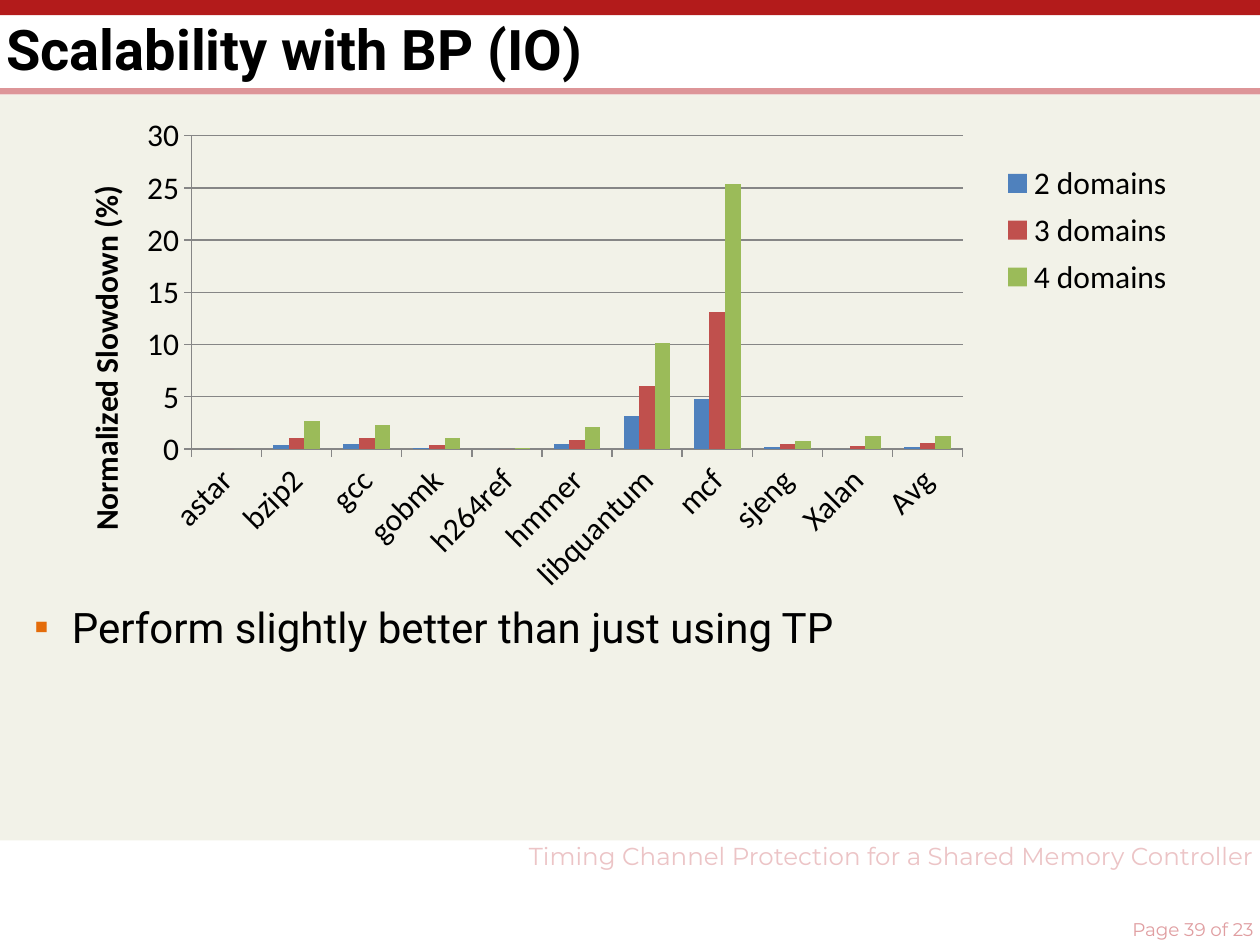
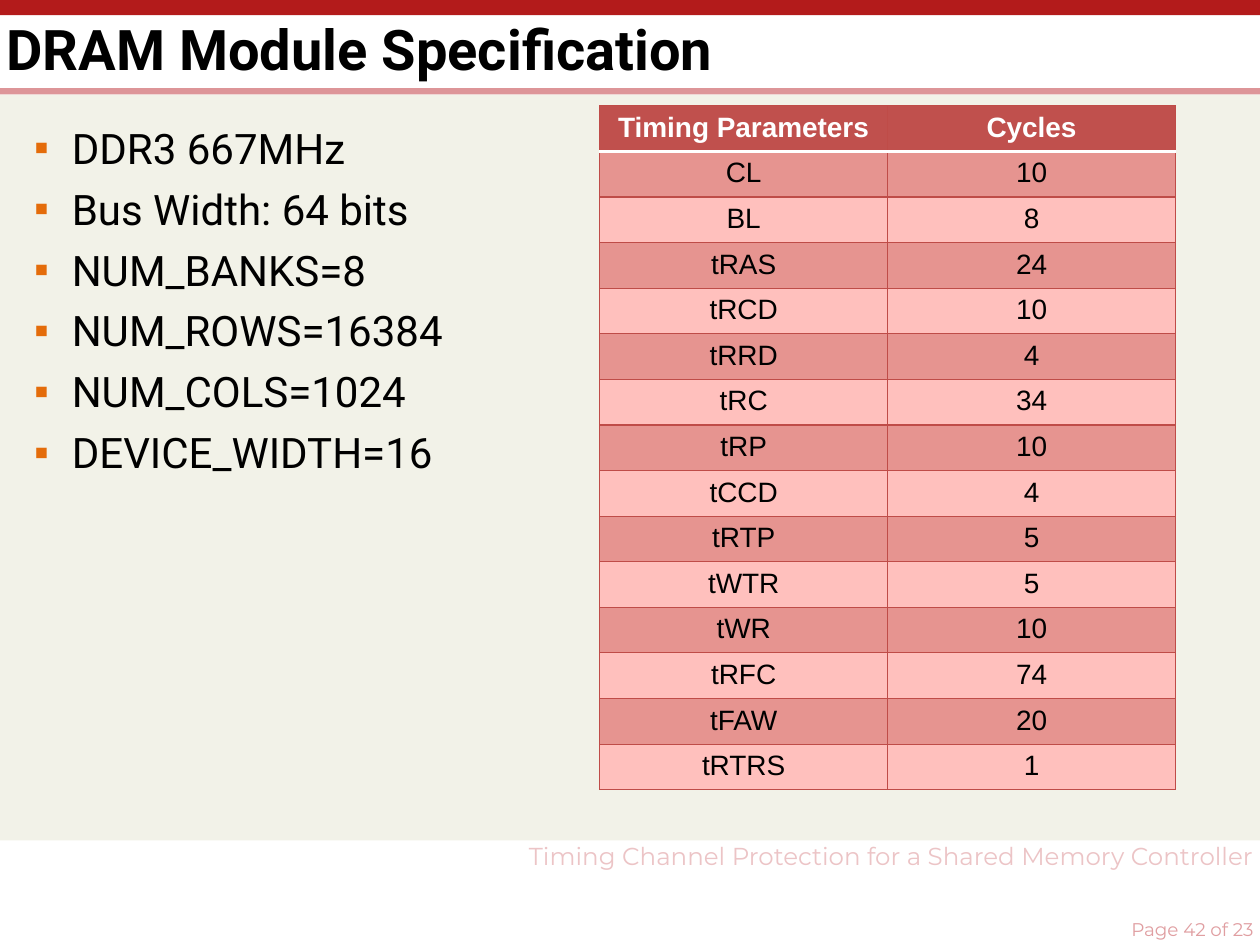
from lxml import etree
from pptx import Presentation
from pptx.chart.data import CategoryChartData
from pptx.dml.color import RGBColor
from pptx.enum.chart import XL_CHART_TYPE, XL_LEGEND_POSITION, XL_TICK_MARK
from pptx.enum.shapes import MSO_SHAPE
from pptx.enum.text import MSO_ANCHOR, MSO_AUTO_SIZE, PP_ALIGN
from pptx.oxml.ns import qn
from pptx.util import Inches, Pt

COLUMNS = XL_CHART_TYPE.COLUMN_CLUSTERED
LEGEND_RIGHT = XL_LEGEND_POSITION.RIGHT
TICK_OUT = XL_TICK_MARK.OUTSIDE
RECT = MSO_SHAPE.RECTANGLE
MIDDLE = MSO_ANCHOR.MIDDLE
NO_FIT = MSO_AUTO_SIZE.NONE
LEFT, CENTER, RIGHT = PP_ALIGN.LEFT, PP_ALIGN.CENTER, PP_ALIGN.RIGHT

W, H = 10, 7.5
COLORS = {
    "text": "000000", "white": "FFFFFF", "panel": "F2F2E8", "band": "B31B1B",
    "rule": "DD9598", "footer": "ECC4C6", "page": "E09EA1", "bullet": "E46C0A",
    "axis": "868686", "header": "C0504D", "border": "BF4C48",
    "row_dark": "E69490", "row_light": "FFC0BD",
}
BANDS = [("panel", 0.75, 5.92), ("band", 0, 0.12), ("rule", 0.7, 0.05)]
FOOTER = "Timing Channel Protection for a Shared Memory Controller"

SLOWDOWN = {
    "title": "Scalability with BP (IO)",
    "page": 39,
    "body_top": 4.72,
    "bullets": ["Perform slightly better than just using TP"],
    "axis": "Normalized Slowdown (%)",
    "programs": ["astar", "bzip2", "gcc", "gobmk", "h264ref", "hmmer",
                 "libquantum", "mcf", "sjeng", "Xalan", "Avg"],
    "series": [
        ("2 domains", "4F81BD", [0, 0.4, 0.5, 0.1, 0, 0.5, 3.2, 4.8, 0.2, 0, 0.2]),
        ("3 domains", "C0504D", [0, 1.1, 1.1, 0.4, 0, 0.9, 6, 13.1, 0.5, 0.3, 0.6]),
        ("4 domains", "9BBB59", [0, 2.7, 2.3, 1.1, 0.1, 2.1, 10.2, 25.4, 0.8, 1.3, 1.3]),
    ],
}
DRAM = {
    "title": "DRAM Module Specification",
    "page": 42,
    "body_top": 0.92,
    "bullets": ["DDR3 667MHz", "Bus Width: 64 bits", "NUM_BANKS=8",
                "NUM_ROWS=16384", "NUM_COLS=1024", "DEVICE_WIDTH=16"],
    "timing": [
        ("Timing Parameters", "Cycles"), ("CL", 10), ("BL", 8), ("tRAS", 24),
        ("tRCD", 10), ("tRRD", 4), ("tRC", 34), ("tRP", 10), ("tCCD", 4),
        ("tRTP", 5), ("tWTR", 5), ("tWR", 10), ("tRFC", 74), ("tFAW", 20),
        ("tRTRS", 1),
    ],
}


def rgb(name):
    return RGBColor.from_string(COLORS.get(name, name))


def style(font, face, size, color="text", bold=False):
    font.name, font.size, font.bold = face, Pt(size), bold
    font.color.rgb = rgb(color)


def sub(parent, tag, **attrs):
    return etree.SubElement(parent, qn(tag), attrs)


def place(shape, left, top, width, height):
    shape.left, shape.top = Inches(left), Inches(top)
    shape.width, shape.height = Inches(width), Inches(height)


def set_line(shape_tf, text, align, bottom=0):
    shape_tf.word_wrap = True
    shape_tf.auto_size = NO_FIT
    shape_tf.vertical_anchor = MIDDLE
    shape_tf.margin_left = shape_tf.margin_right = Inches(0.05)
    shape_tf.margin_top, shape_tf.margin_bottom = 0, Inches(bottom)
    p = shape_tf.paragraphs[0]
    p.text, p.alignment = text, align
    return p.font


def add_footer(s, text, left, top, size, color):
    box = s.shapes.add_textbox(Inches(left), Inches(top), Inches(W - left), Inches(0.25))
    style(set_line(box.text_frame, text, RIGHT), "Montserrat", size, color)


def add_bullets(body, bullets):
    tf = body.text_frame
    tf.auto_size = NO_FIT
    for i, text in enumerate(bullets):
        p = tf.paragraphs[0] if i == 0 else tf.add_paragraph()
        p.text = text
        p.space_before = Pt(6 if i else 0)
        pPr = p._p.get_or_add_pPr()
        pPr.set("marL", str(Inches(0.3)))
        pPr.set("indent", str(-Inches(0.3)))
        sub(sub(pPr, "a:buClr"), "a:srgbClr", val=COLORS["bullet"])
        sub(pPr, "a:buFont", typeface="Arial")
        sub(pPr, "a:buChar", char="▪")
        style(p.font, "Roboto", 24)


def add_slide(prs, content):
    s = prs.slides.add_slide(prs.slide_layouts[1])
    for i, (color, top, height) in enumerate(BANDS):
        band = s.shapes.add_shape(RECT, 0, Inches(top), Inches(W), Inches(height))
        band.shadow.inherit = False
        band.fill.solid()
        band.fill.fore_color.rgb = rgb(color)
        band.line.fill.background()
        s.shapes._spTree.insert(2 + i, band._element)
    title, body = s.placeholders
    place(title, 0, 0.2, 8.75, 0.42)
    style(set_line(title.text_frame, content["title"], LEFT, 0.05), "Roboto", 32, bold=True)
    place(body, 0.17, content["body_top"], 9.67, 6.5 - content["body_top"])
    add_bullets(body, content["bullets"])
    add_footer(s, FOOTER, 3.25, 6.67, 14, "footer")
    add_footer(s, f"Page {content['page']} of 23", 8.5, 7.25, 10.5, "page")
    return s


def set_layout(parent, index, x, y, w=None, h=None):
    for old in parent.findall(qn("c:layout")):
        parent.remove(old)
    layout = etree.Element(qn("c:layout"))
    manual = sub(layout, "c:manualLayout")
    if parent.tag == qn("c:plotArea"):
        sub(manual, "c:layoutTarget", val="inner")
    sub(manual, "c:xMode", val="edge")
    sub(manual, "c:yMode", val="edge")
    for key, value in zip("xywh", (x, y, w, h)):
        if value is not None:
            sub(manual, f"c:{key}", val=str(value))
    parent.insert(index, layout)


def add_slowdown_chart(s, content):
    data = CategoryChartData()
    data.categories = content["programs"]
    for name, _, values in content["series"]:
        data.add_series(name, values)
    chart = s.shapes.add_chart(COLUMNS, Inches(0.35), Inches(0.84),
                               Inches(9), Inches(3.95), data).chart
    style(chart.font, "Calibri", 18)
    chart.has_title = False
    chart.has_legend = True
    chart.legend.position = LEGEND_RIGHT
    chart.legend.include_in_layout = False
    plot = chart.plots[0]
    plot.gap_width, plot.overlap, plot.vary_by_categories = 150, 0, False
    for series, (_, color, _) in zip(plot.series, content["series"]):
        series.format.fill.solid()
        series.format.fill.fore_color.rgb = rgb(color)
        series.invert_if_negative = False

    cat, val = chart.category_axis, chart.value_axis
    for axis in (cat, val):
        axis.major_tick_mark = TICK_OUT
        style(axis.tick_labels.font, "Calibri", 18)
        axis.format.line.color.rgb = rgb("axis")
    cat._element.find(qn("c:txPr")).find(qn("a:bodyPr")).set("rot", "-2700000")
    val.minimum_scale, val.maximum_scale, val.major_unit = 0, 30, 5
    val.tick_labels.number_format = "General"
    val.tick_labels.number_format_is_linked = False
    val.major_gridlines.format.line.color.rgb = rgb("axis")
    tf = val.axis_title.text_frame
    tf.text = content["axis"]
    style(tf.paragraphs[0].font, "Calibri", 18, bold=True)
    tf._txBody.find(qn("a:bodyPr")).set("rot", "-5400000")

    set_layout(chart._chartSpace.chart.plotArea, 0, 0.13, 0.06, 0.68, 0.63)
    set_layout(chart.legend._element, 1, 0.84, 0.1, 0.16, 0.3)
    set_layout(val._element.find(qn("c:title")), 1, 0.03, 0.15)


def set_border(tcPr, side, color, width):
    ln = sub(tcPr, f"a:ln{side}", w=str(Pt(width)))
    sub(sub(ln, "a:solidFill"), "a:srgbClr", val=COLORS[color])


def add_timing_table(s, rows):
    table = s.shapes.add_table(len(rows), 2, Inches(4.76), Inches(0.84),
                               Inches(4.57), Inches(5.43)).table
    table.horz_banding = False
    for i, row in enumerate(rows):
        fill = "header" if i == 0 else ("row_light", "row_dark")[i % 2]
        for j, value in enumerate(row):
            cell = table.cell(i, j)
            tcPr = cell._tc.get_or_add_tcPr()
            for side in "LRTB":
                under_header = (i, side) in ((0, "B"), (1, "T"))
                set_border(tcPr, side, *(("white", 2) if under_header else ("border", 0.75)))
            cell.fill.solid()
            cell.fill.fore_color.rgb = rgb(fill)
            p = cell.text_frame.paragraphs[0]
            p.text, p.alignment = str(value), CENTER
            style(p.font, "Arial", 16, "text" if i else "white", i == 0)


def main():
    prs = Presentation()
    prs.slide_width, prs.slide_height = Inches(W), Inches(H)
    add_slowdown_chart(add_slide(prs, SLOWDOWN), SLOWDOWN)
    add_timing_table(add_slide(prs, DRAM), DRAM["timing"])
    prs.save("out.pptx")


if __name__ == "__main__":
    main()
